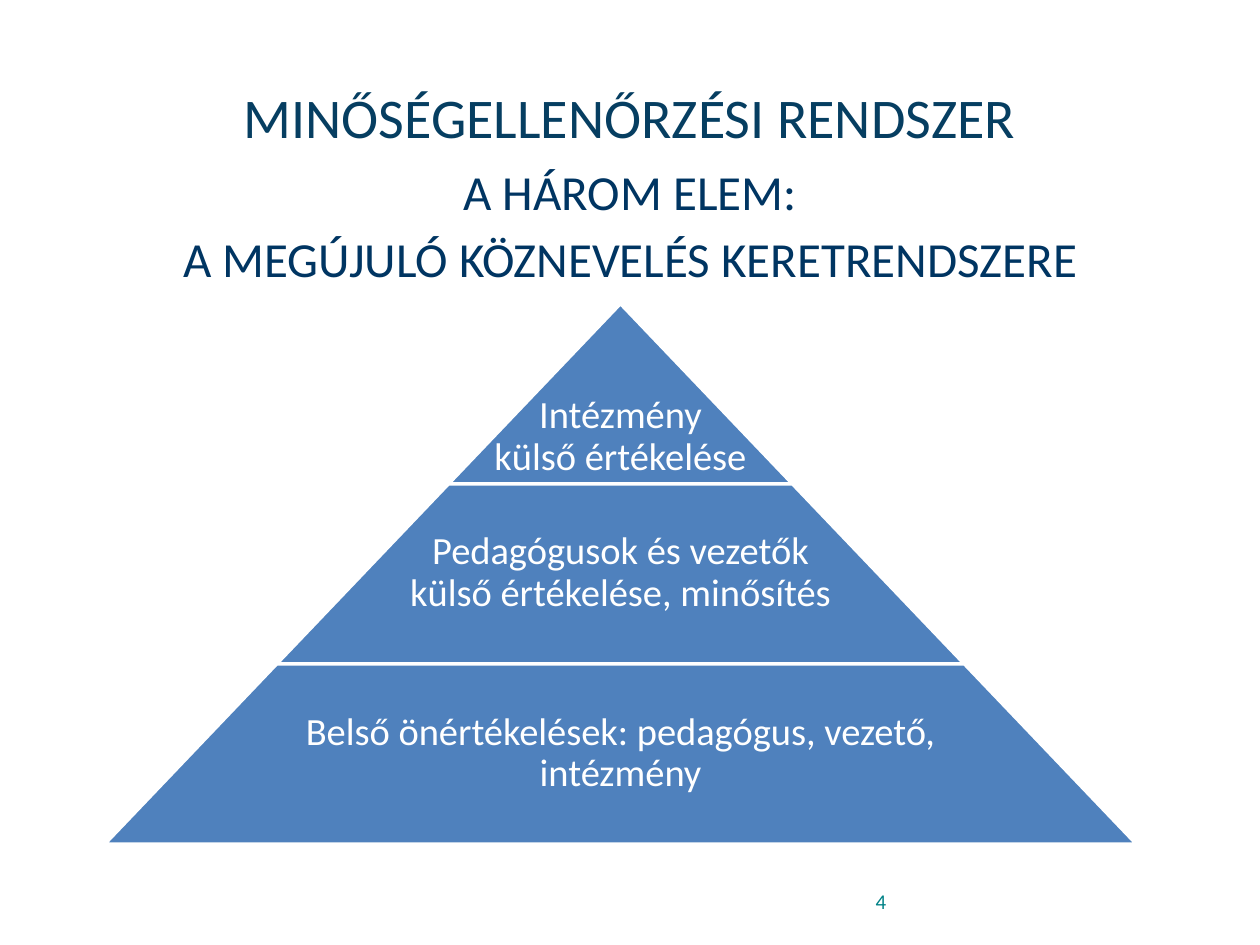
from pptx import Presentation
from pptx.dml.color import RGBColor
from pptx.enum.shapes import MSO_SHAPE
from pptx.enum.text import MSO_ANCHOR, PP_ALIGN
from pptx.util import Emu, Pt

PX = 9144
FONT = "Calibri"
LEFT, CENTER = PP_ALIGN.LEFT, PP_ALIGN.CENTER
TOP, MIDDLE, BOTTOM = MSO_ANCHOR.TOP, MSO_ANCHOR.MIDDLE, MSO_ANCHOR.BOTTOM
TRAPEZOID = MSO_SHAPE.TRAPEZOID
COLORS = {
    "title": "063E61",
    "body": "003562",
    "number": "018287",
    "tier": "4F81BD",
    "white": "FFFFFF",
}


def px(*nums):
    return [Emu(round(n * PX)) for n in nums]


def color(name):
    return RGBColor.from_string(COLORS[name])


def add_text(slide, text, box, size, ink, align=CENTER, anchor=MIDDLE,
             inset=(10, 5, 10, 5), gap=0, spacing=1.0):
    frame = slide.shapes.add_textbox(*px(*box)).text_frame
    frame.word_wrap = True
    frame.vertical_anchor = anchor
    (frame.margin_left, frame.margin_top,
     frame.margin_right, frame.margin_bottom) = px(*inset)
    frame.text = text
    for index, para in enumerate(frame.paragraphs):
        para.alignment = align
        para.line_spacing = spacing
        if index:
            para.space_before = Pt(gap)
        para.font.name = FONT
        para.font.size = Pt(size)
        para.font.color.rgb = color(ink)


def add_header(slide, box):
    left, top, width, height = box
    add_text(slide, "MINŐSÉGELLENŐRZÉSI RENDSZER",
             (left, top, width, 125), 32, "title")
    add_text(slide, "A HÁROM ELEM:\nA MEGÚJULÓ KÖZNEVELÉS KERETRENDSZERE",
             (left, top + 93, width, height - 93), 28, "body",
             anchor=TOP, gap=5)


def add_pyramid(slide, box):
    left, top, width, height = box
    tiers = [
        ("Intézmény\vkülső értékelése", 273, BOTTOM),
        ("Pedagógusok és vezetők külső értékelése, minősítés", 355, MIDDLE),
        ("Belső önértékelések: pedagógus, vezető, intézmény", 532, MIDDLE),
    ]
    step = height / len(tiers)
    side = width / len(tiers)
    mid = left + width / 2
    for index, (text, room, anchor) in enumerate(tiers):
        y = top + index * step
        span = side * (index + 1)
        tier = slide.shapes.add_shape(
            TRAPEZOID, *px(mid - span / 2, y, span, step))
        tier.adjustments[0] = side / 2 / step
        tier.shadow.inherit = False
        tier.fill.solid()
        tier.fill.fore_color.rgb = color("tier")
        tier.line.color.rgb = color("white")
        tier.line.width = Pt(2)
        add_text(slide, text, (mid - room / 2, y, room, step), 22, "white",
                 anchor=anchor, inset=(3, 3, 3, 4), spacing=0.9)


def add_number(slide, box):
    add_text(slide, "4", box, 12, "number", align=LEFT)


def main():
    deck = Presentation()
    deck.slide_width, deck.slide_height = px(1000, 750)
    slide = deck.slides.add_slide(deck.slide_layouts[6])
    add_header(slide, (50, 30, 900, 211))
    add_number(slide, (685, 695, 265, 40))
    add_pyramid(slide, (83, 241, 819, 429))
    deck.save("out.pptx")


if __name__ == "__main__":
    main()
